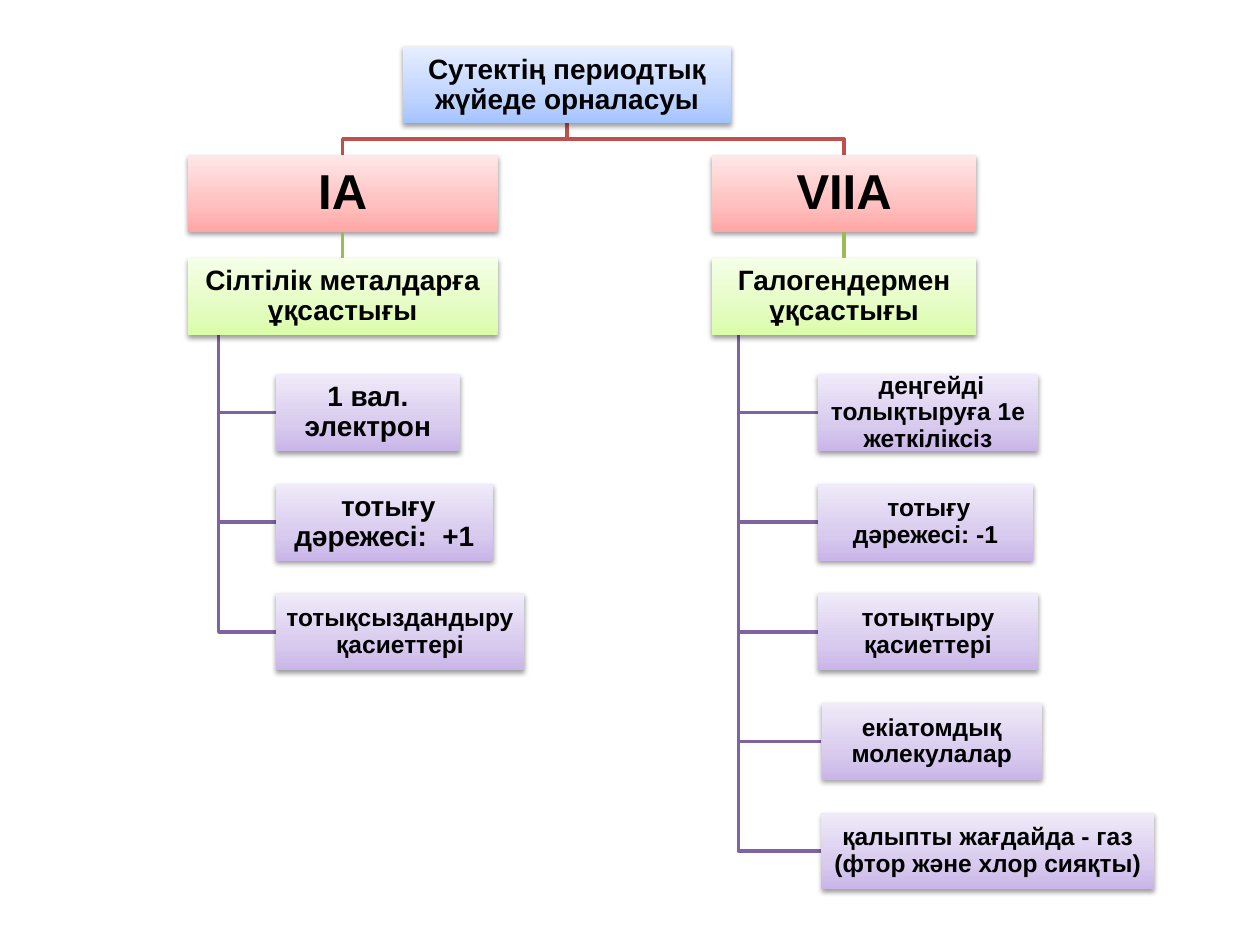
from typing import NamedTuple

from lxml import etree
from pptx import Presentation
from pptx.dml.color import RGBColor
from pptx.enum.shapes import MSO_CONNECTOR, MSO_SHAPE
from pptx.enum.text import MSO_ANCHOR, PP_ALIGN
from pptx.oxml import parse_xml
from pptx.oxml.ns import qn
from pptx.util import Inches, Pt

RECT = MSO_SHAPE.RECTANGLE
STRAIGHT = MSO_CONNECTOR.STRAIGHT
MIDDLE = MSO_ANCHOR.MIDDLE
CENTER = PP_ALIGN.CENTER
BOTTOM, TOP = 2, 0

NS = "http://schemas.openxmlformats.org/drawingml/2006/main"
HIGH = 0.61
ROOT_TOP, GROUP_TOP, LIKE_TOP, LEAF_TOP = 0.37, 1.23, 2.05, 2.97
STEP = 0.87

BLUE = ("A4C4FF", "BFD4FF", "E6EEFF")
RED = ("FFA6A5", "FFC0BF", "FFE7E7")
GREEN = ("DAFDA7", "E4FCC2", "F5FFE7")
VIOLET = ("C9B5E8", "D8CBEE", "F0EAF9")
RED_LINE, GREEN_LINE, VIOLET_LINE = "C0504D", "9BBB59", "8064A2"


class Box(NamedTuple):
    left: float
    top: float
    width: float
    text: str
    size: int
    tints: tuple[str, str, str]

    @property
    def mid(self) -> float:
        return self.left + self.width / 2


class Leaf(NamedTuple):
    left: float
    width: float
    text: str
    size: int = 14


class Branch(NamedTuple):
    left: float
    width: float
    name: str
    like: str
    leaves: list[Leaf]


ROOT = Box(3.2, ROOT_TOP, 2.6, "Сутектің периодтық жүйеде орналасуы", 16, BLUE)
BRANCHES = [
    Branch(1.49, 2.46, "IА", "Сілтілік металдарға ұқсастығы", [
        Leaf(2.19, 1.46, "1 вал. электрон", 16),
        Leaf(2.19, 1.72, " тотығу дәрежесі:  +1", 16),
        Leaf(2.19, 1.97, "тотықсыздандыру қасиеттері"),
    ]),
    Branch(5.65, 2.1, "VIIА", "Галогендермен ұқсастығы", [
        Leaf(6.49, 1.75, " деңгейді толықтыруға 1e жеткіліксіз"),
        Leaf(6.49, 1.71, " тотығу дәрежесі: -1"),
        Leaf(6.49, 1.75, "тотықтыру қасиеттері"),
        Leaf(6.52, 1.75, "екіатомдық молекулалар"),
        Leaf(6.52, 2.64, "қалыпты жағдайда - газ (фтор және хлор сияқты)"),
    ]),
]


def rgb(code: str) -> RGBColor:
    return RGBColor.from_string(code)


def set_all(item, values: dict) -> None:
    for name, value in values.items():
        setattr(item, name, value)


def shade(shape, tints: tuple[str, str, str]) -> None:
    """Give the shape a bottom-to-top gradient and a soft shadow below."""
    stops = "".join(
        f'<a:gs pos="{pos}000"><a:srgbClr val="{rgb(tint)}"/></a:gs>'
        for pos, tint in zip((0, 35, 100), tints))
    shape.line.fill.background()
    shape.shadow.inherit = False
    props = shape._element.spPr
    props.find(qn("a:prstGeom")).addnext(parse_xml(
        f'<a:gradFill xmlns:a="{NS}" rotWithShape="1"><a:gsLst>{stops}</a:gsLst>'
        '<a:lin ang="16200000" scaled="0"/></a:gradFill>'))
    props.find(qn("a:effectLst")).append(parse_xml(
        f'<a:outerShdw xmlns:a="{NS}" blurRad="{Pt(3.1)}" dist="{Pt(1.6)}" '
        'dir="5400000" rotWithShape="0"><a:srgbClr val="000000">'
        '<a:alpha val="38000"/></a:srgbClr></a:outerShdw>'))


def draw_box(slide, box: Box):
    shape = slide.shapes.add_shape(
        RECT, *map(Inches, (box.left, box.top, box.width, HIGH)))
    shade(shape, box.tints)
    frame = shape.text_frame
    inset = Inches(0.01)
    set_all(frame, dict(
        word_wrap=True, vertical_anchor=MIDDLE, margin_left=inset,
        margin_top=inset, margin_right=inset, margin_bottom=inset))
    para = frame.paragraphs[0]
    set_all(para, dict(alignment=CENTER, line_spacing=0.9))
    run = para.add_run()
    run.text = box.text
    set_all(run.font, dict(name="Arial", size=Pt(box.size), bold=True))
    run.font.color.rgb = rgb("000000")
    return shape


def draw_bend(slide, points: list[tuple[float, float]], color: str) -> None:
    start, *rest = [(Inches(x), Inches(y)) for x, y in points]
    build = slide.shapes.build_freeform(*start)
    build.add_line_segments(rest, close=False)
    shape = build.convert_to_shape()
    shape.fill.background()
    shape.shadow.inherit = False
    shape.line.color.rgb = rgb(color)
    shape.line.width = Pt(2)


def join(slide, upper, lower, color: str) -> None:
    line = slide.shapes.add_connector(STRAIGHT, 0, 0, 0, 0)
    line.begin_connect(upper, BOTTOM)
    line.end_connect(lower, TOP)
    line.line.color.rgb = rgb(color)
    line.line.width = Pt(2)
    etree.SubElement(line._element.spPr, qn("a:effectLst"))


def draw_branch(slide, branch: Branch) -> None:
    left, width = branch.left, branch.width
    group = Box(left, GROUP_TOP, width, branch.name, 28, RED)
    like = Box(left, LIKE_TOP, width, branch.like, 16, GREEN)
    leaves = [Box(leaf.left, LEAF_TOP + STEP * i, leaf.width, leaf.text,
                  leaf.size, VIOLET) for i, leaf in enumerate(branch.leaves)]

    base = ROOT_TOP + HIGH
    bar = (base + GROUP_TOP) / 2
    draw_bend(slide, [(ROOT.mid, base), (ROOT.mid, bar),
                      (group.mid, bar), (group.mid, GROUP_TOP)], RED_LINE)
    stem = left + width / 10
    for leaf in leaves:
        level = leaf.top + HIGH / 2
        draw_bend(slide, [(stem, LIKE_TOP + HIGH), (stem, level),
                          (leaf.left, level)], VIOLET_LINE)

    join(slide, draw_box(slide, group), draw_box(slide, like), GREEN_LINE)
    for leaf in leaves:
        draw_box(slide, leaf)


def main() -> None:
    deck = Presentation()
    set_all(deck, dict(slide_width=Inches(10), slide_height=Inches(7.5)))
    slide = deck.slides.add_slide(deck.slide_layouts[6])
    for branch in BRANCHES:
        draw_branch(slide, branch)
    draw_box(slide, ROOT)
    deck.save("out.pptx")


if __name__ == "__main__":
    main()
